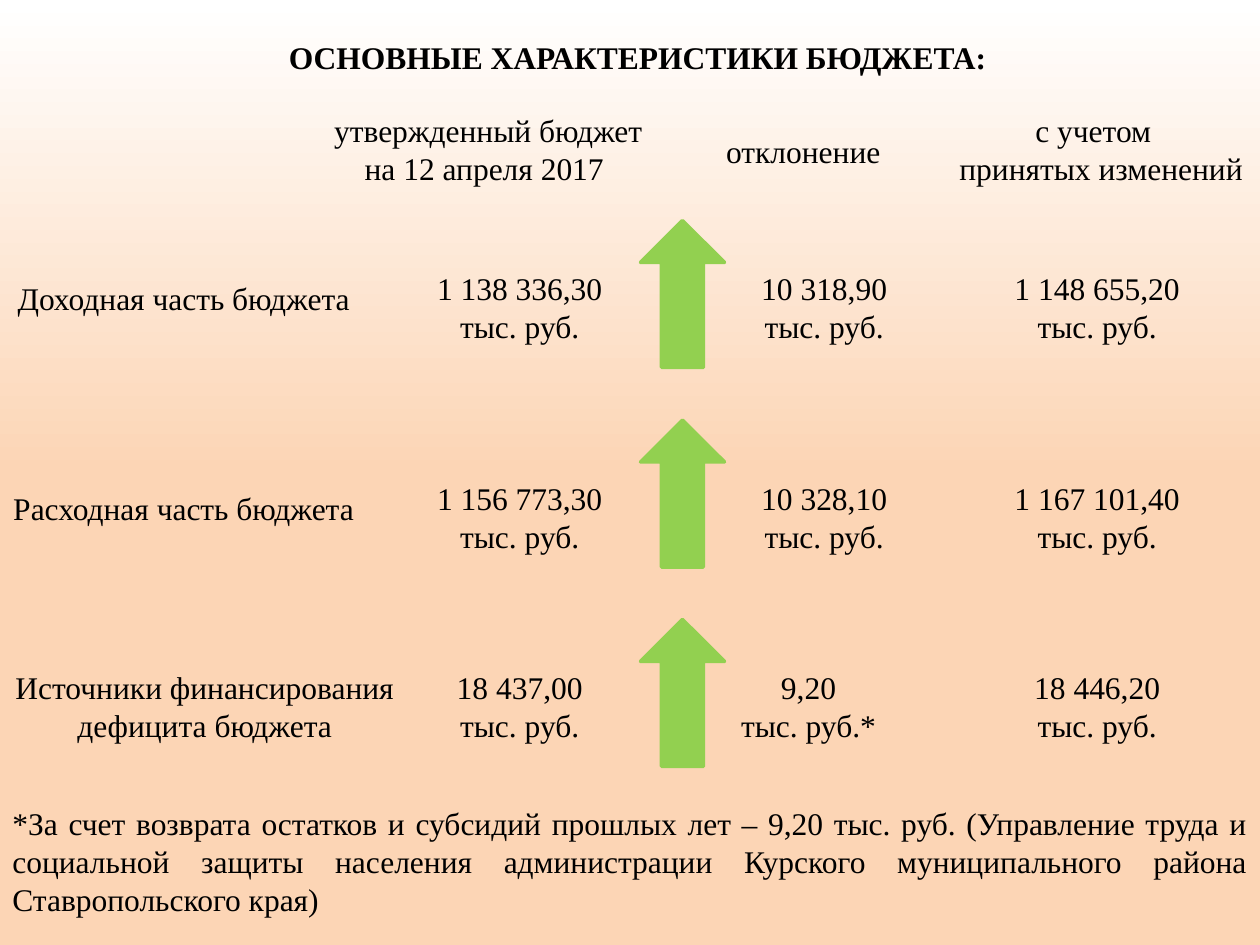
from copy import deepcopy
from dataclasses import dataclass

from pptx import Presentation
from pptx.dml.color import RGBColor
from pptx.enum.shapes import MSO_SHAPE
from pptx.enum.text import MSO_AUTO_SIZE, PP_ALIGN
from pptx.oxml.ns import qn
from pptx.slide import Slide
from pptx.util import Pt

CENTER = PP_ALIGN.CENTER
JUSTIFY = PP_ALIGN.JUSTIFY
FIT_TEXT = MSO_AUTO_SIZE.SHAPE_TO_FIT_TEXT
UP_ARROW = MSO_SHAPE.UP_ARROW

WHITE = RGBColor(0xFF, 0xFF, 0xFF)
PEACH = RGBColor(0xFC, 0xD5, 0xB5)
GREEN = RGBColor(0x92, 0xD0, 0x50)
BLACK = RGBColor(0x00, 0x00, 0x00)

FONT = "Times New Roman"
FONT_SIZE = 18
ONE_LINE = 29
TWO_LINES = 51
THREE_LINES = 73

APPROVED_LEFT, REVISED_LEFT, AMOUNT_WIDTH = 240, 570, 114
ARROW_LEFT, ARROW_TOP, ARROW_STEP = 366, 126, 114
ARROW_WIDTH, ARROW_HEIGHT = 48, 84
UNIT = "тыс. руб."


@dataclass(frozen=True)
class Box:
    left: float
    top: float
    width: float
    height: float


@dataclass(frozen=True)
class BudgetRow:
    label: str
    label_box: Box
    approved: str
    change: str
    revised: str
    change_box: Box
    change_mark: str = ""


ROWS = [
    BudgetRow("Доходная часть бюджета", Box(0, 156, 210, ONE_LINE),
              "1 138 336,30", "10 318,90", "1 148 655,20", Box(420, 150, 102, TWO_LINES)),
    BudgetRow("Расходная часть бюджета", Box(0, 276, 210, ONE_LINE),
              "1 156 773,30", "10 328,10", "1 167 101,40", Box(420, 270, 102, TWO_LINES)),
    BudgetRow("Источники финансирования дефицита бюджета", Box(0, 378, 234, TWO_LINES),
              "18 437,00", "9,20", "18 446,20", Box(414, 378, 96, TWO_LINES), "*"),
]

HEADINGS = [
    ("утвержденный бюджет на 12 апреля 2017 ", Box(180, 60, 198, TWO_LINES)),
    ("отклонение", Box(402, 72, 114, ONE_LINE)),
    ("с учетом \n принятых изменений", Box(534, 60, 186, TWO_LINES)),
]

TITLE = "ОСНОВНЫЕ ХАРАКТЕРИСТИКИ БЮДЖЕТА:"
FOOTNOTE = (
    "*За счет возврата остатков и субсидий прошлых лет – 9,20 тыс. руб. "
    "(Управление труда и социальной защиты населения администрации "
    "Курского муниципального района Ставропольского края)"
)


def paint_background(slide: Slide) -> None:
    """Fade from white at the top to peach at mid-height and below."""
    fill = slide.background.fill
    fill.gradient()
    fill.gradient_angle = 270
    last_stop = list(slide.element.iter(qn("a:gs")))[-1]
    last_stop.addnext(deepcopy(last_stop))
    stops = [(0, WHITE), (0.5, PEACH), (1, PEACH)]
    for stop, (position, color) in zip(fill.gradient_stops, stops):
        stop.position = position
        stop.color.rgb = color


def add_text(slide: Slide, text: str, box: Box, alignment: PP_ALIGN = CENTER,
             bold: bool = False, wrap: bool = True) -> None:
    shape = slide.shapes.add_textbox(
        Pt(box.left), Pt(box.top), Pt(box.width), Pt(box.height))
    frame = shape.text_frame
    frame.word_wrap = wrap
    frame.auto_size = FIT_TEXT
    frame.text = text
    for paragraph in frame.paragraphs:
        paragraph.alignment = alignment
        font = paragraph.font
        font.name = FONT
        font.size = Pt(FONT_SIZE)
        font.bold = bold
        font.color.rgb = BLACK


def add_growth_arrow(slide: Slide, top: float) -> None:
    shape = slide.shapes.add_shape(
        UP_ARROW, Pt(ARROW_LEFT), Pt(top), Pt(ARROW_WIDTH), Pt(ARROW_HEIGHT))
    shape.shadow.inherit = False
    shape.fill.solid()
    shape.fill.fore_color.rgb = GREEN
    shape.line.color.rgb = GREEN
    shape.line.width = Pt(2)


def add_budget_row(slide: Slide, row: BudgetRow) -> None:
    add_text(slide, row.label, row.label_box)
    add_text(slide, f"{row.change}\n{UNIT}{row.change_mark}", row.change_box)
    for left, amount in ((APPROVED_LEFT, row.approved), (REVISED_LEFT, row.revised)):
        box = Box(left, row.change_box.top, AMOUNT_WIDTH, TWO_LINES)
        add_text(slide, f"{amount}\n{UNIT}", box)


def main() -> None:
    presentation = Presentation()
    presentation.slide_width = Pt(720)
    presentation.slide_height = Pt(540)
    slide = presentation.slides.add_slide(presentation.slide_layouts[6])

    paint_background(slide)
    add_text(slide, TITLE, Box(156, 18, 417, ONE_LINE), bold=True, wrap=False)
    for heading, box in HEADINGS:
        add_text(slide, heading, box)
    for index, row in enumerate(ROWS):
        add_growth_arrow(slide, ARROW_TOP + index * ARROW_STEP)
        add_budget_row(slide, row)
    add_text(slide, FOOTNOTE, Box(0, 456, 720, THREE_LINES), JUSTIFY)

    presentation.save("out.pptx")


if __name__ == "__main__":
    main()
